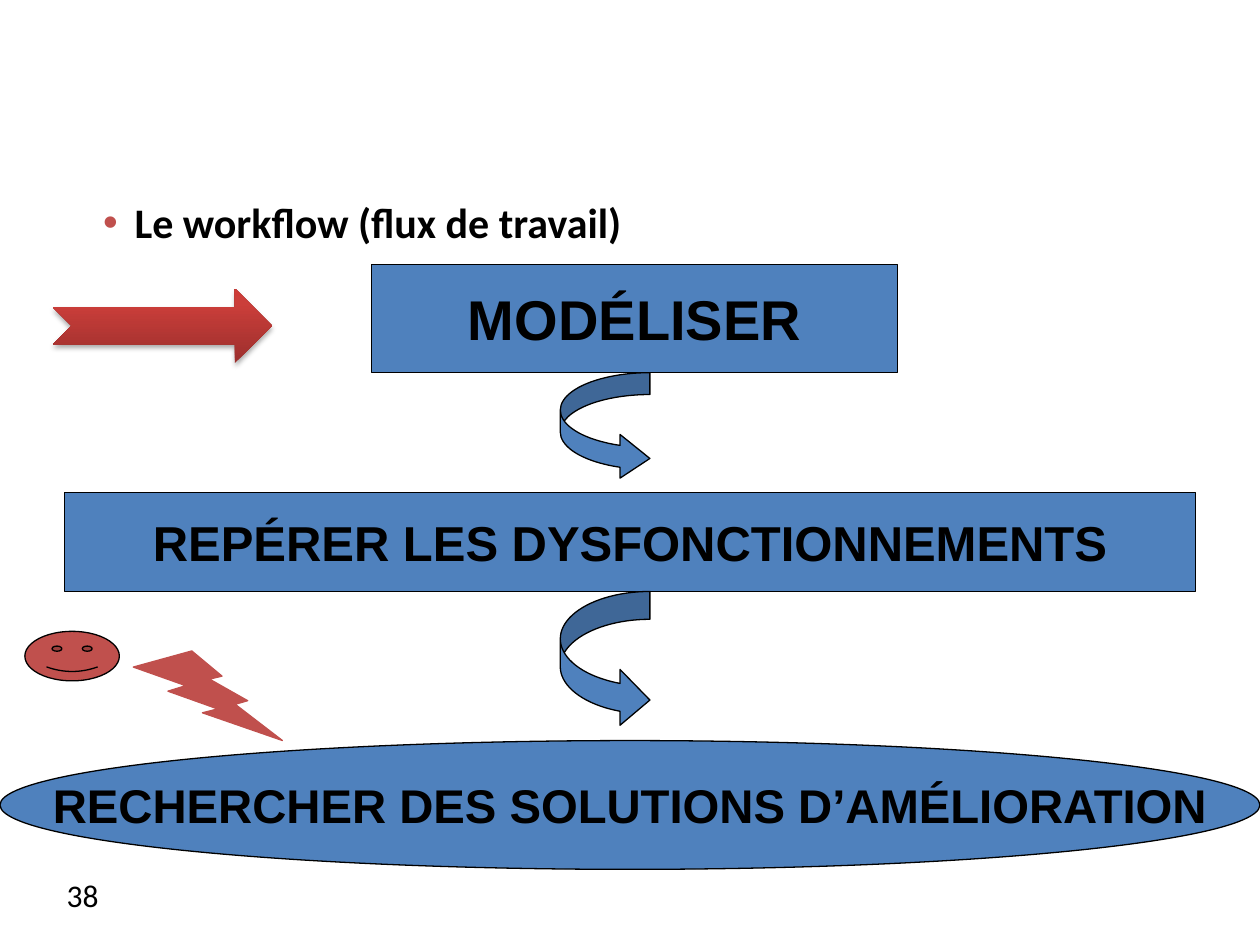
from copy import deepcopy

from lxml import etree
from pptx import Presentation
from pptx import util as u
from pptx.dml.color import RGBColor
from pptx.enum import shapes, text
from pptx.oxml import ns

Pt = u.Pt
SHAPE = shapes.MSO_SHAPE
COLORS = {
    "blue": "4F81BD",
    "red": "C0504D",
    "black": "000000",
    "arrow_dark": "9C2F2D",
    "arrow_mid": "CB3E3A",
    "arrow_light": "CE3B37",
}


def add_shape(kind, box, fill, line="black", adjustments=()):
    shape = slide.shapes.add_shape(kind, *[Pt(length) for length in box])
    shape.shadow.inherit = False
    shape.fill.solid()
    shape.fill.fore_color.rgb = RGBColor.from_string(COLORS[fill])
    shape.line.color.rgb = RGBColor.from_string(COLORS[line])
    shape.line.width = Pt(0.75)
    for index, value in enumerate(adjustments):
        shape.adjustments[index] = value
    return shape


def add_run(paragraph, wording, size, font="Calibri", bold=False):
    run = paragraph.add_run()
    run.text = wording
    run.font.name = font
    run.font.size = Pt(size)
    run.font.bold = bold
    run.font.color.rgb = RGBColor.from_string(COLORS["black"])


presentation = Presentation()
presentation.slide_width = Pt(720)
presentation.slide_height = Pt(540)
slide = presentation.slides.add_slide(presentation.slide_layouts[6])

# Slide number
number_box = slide.shapes.add_textbox(Pt(31), Pt(496.8), Pt(167.8), Pt(28.8))
number_box.text_frame.word_wrap = True
number_box.text_frame.vertical_anchor = text.MSO_ANCHOR.MIDDLE
add_run(number_box.text_frame.paragraphs[0], "38", 18)

# Bulleted heading
heading_box = slide.shapes.add_textbox(Pt(19.4), Pt(112), Pt(612.7), Pt(36))
heading_box.text_frame.word_wrap = True
heading = heading_box.text_frame.paragraphs[0]
heading.line_spacing = 0.9
properties = heading._p.get_or_add_pPr()
properties.set("marL", str(Pt(50.4)))
properties.set("indent", str(Pt(-18)))
bullet_color = etree.SubElement(properties, ns.qn("a:buClr"))
etree.SubElement(bullet_color, ns.qn("a:srgbClr"), val=COLORS["red"])
etree.SubElement(properties, ns.qn("a:buFont"), typeface="Arial")
etree.SubElement(properties, ns.qn("a:buChar"), char="•")
add_run(heading, "Le workflow (flux de travail)", 24, bold=True)

# Red arrow pointing at the first step
pointer = add_shape(SHAPE.NOTCHED_RIGHT_ARROW, (30.2, 164.9, 125.3, 42.5), "red")
pointer.line.fill.background()
pointer.fill.gradient()
pointer.fill.gradient_angle = 90
stop_list = pointer._element.spPr.find(ns.qn("a:gradFill")).find(ns.qn("a:gsLst"))
stop_list.append(deepcopy(stop_list[-1]))
stops = (("arrow_dark", 0), ("arrow_mid", 0.8), ("arrow_light", 1))
for stop, (color, position) in zip(pointer.fill.gradient_stops, stops):
    stop.color.rgb = RGBColor.from_string(COLORS[color])
    stop.position = position
effects = pointer._element.spPr.find(ns.qn("a:effectLst"))
shadow = etree.SubElement(
    effects, ns.qn("a:outerShdw"), blurRad=str(Pt(3.1)), dist=str(Pt(1.8)),
    dir="5400000", rotWithShape="0")
shadow_color = etree.SubElement(shadow, ns.qn("a:srgbClr"), val=COLORS["black"])
etree.SubElement(shadow_color, ns.qn("a:alpha"), val="35000")

# The three steps
steps = (
    (SHAPE.RECTANGLE, (212.4, 151, 300.5, 62), "MODÉLISER", 32),
    (SHAPE.RECTANGLE, (36.8, 281.4, 646.4, 56.6), "REPÉRER LES DYSFONCTIONNEMENTS", 28),
    (SHAPE.OVAL, (0, 423.2, 720, 73.6), "RECHERCHER DES SOLUTIONS D’AMÉLIORATION", 27),
)
for kind, box, wording, size in steps:
    step = add_shape(kind, box, "blue")
    frame = step.text_frame
    frame.word_wrap = False
    frame.vertical_anchor = text.MSO_ANCHOR.MIDDLE
    frame.paragraphs[0].alignment = text.PP_ALIGN.CENTER
    add_run(frame.paragraphs[0], wording, size, "Arial", True)

# Curved arrows between the steps
for top, height, adjustments in (
    (213, 61.5, (0.244, 0.488, 0.333)),
    (338, 78, (0.311, 0.623, 0.333)),
):
    add_shape(SHAPE.CURVED_RIGHT_ARROW, (320.2, top, 51.2, height), "blue",
              adjustments=adjustments)

# Face and lightning bolt
add_shape(SHAPE.LIGHTNING_BOLT, (76.2, 372, 85.2, 51.2), "red", "red")
add_shape(SHAPE.SMILEY_FACE, (14.2, 360.8, 54, 28.3), "red", adjustments=(0.047,))

presentation.save("out.pptx")
